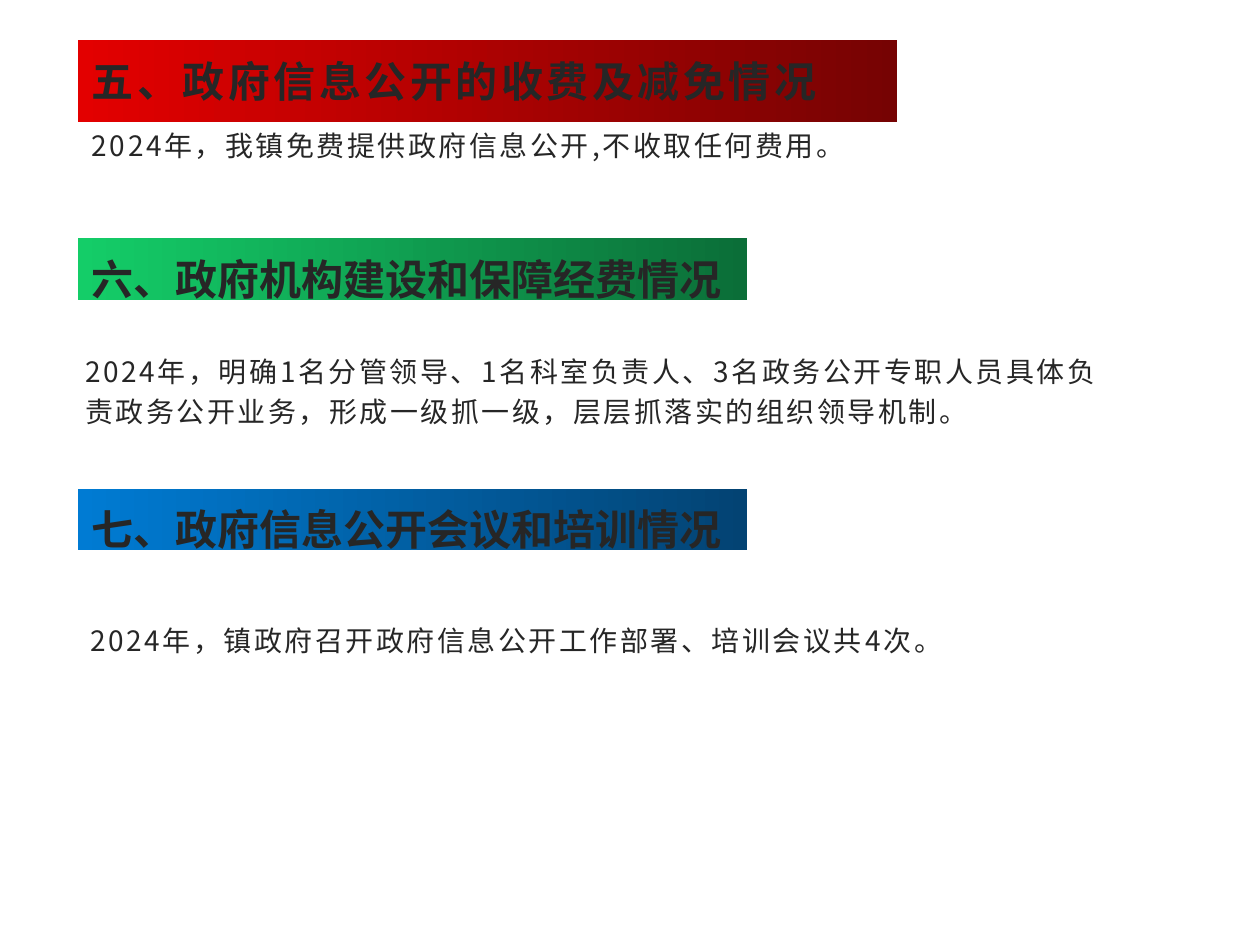
from pptx import Presentation
from pptx.dml.color import RGBColor as Rgb
from pptx.enum.shapes import MSO_SHAPE as Shape
from pptx.enum.text import MSO_ANCHOR as Anchor, PP_ALIGN as Align
from pptx.oxml.ns import qn
from pptx.util import Pt
from lxml.etree import SubElement

FONT = "Noto Sans CJK SC"
HEX = {
    "ink": "262626",
    "red": ("E30000", "760303"),
    "green": ("14CD68", "0B6E38"),
    "blue": ("007BD3", "034373"),
}
PARTS = [
    ("red", (44.6, 23, 468, 46.8), "五、政府信息公开的收费及减免情况", 2,
     (0, 46.8, 656.6, 60.5), (7.9, 0, 6.5, 0),
     "2024年，我镇免费提供政府信息公开,不收取任何费用。"),
    ("green", (44.6, 136, 382.3, 35.3), "六、政府机构建设和保障经费情况", 0,
     (-2.9, 59.1, 600.5, 54), (7.2, 3.6, 7.2, 3.6),
     "2024年，明确1名分管领导、1名科室负责人、3名政务公开专职人员具体负责政务公开业务，"
     "形成一级抓一级，层层抓落实的组织领导机制。"),
    ("blue", (44.6, 279.3, 382.3, 35.3), "七、政府信息公开会议和培训情况", 0,
     (0, 69.9, 651.6, 30.2), (7.2, 3.6, 7.2, 3.6),
     "2024年，镇政府召开政府信息公开工作部署、培训会议共4次。"),
]


def write(shape, text, size, gap, pads, bold=False):
    frame = shape.text_frame
    frame.text = text
    frame.word_wrap = True
    frame.vertical_anchor = Anchor.TOP
    (frame.margin_left, frame.margin_top,
     frame.margin_right, frame.margin_bottom) = map(Pt, pads)
    para = frame.paragraphs[0]
    para.alignment = Align.LEFT
    para.line_spacing = 1.2
    run = para.runs[0]
    run.font.size = Pt(size)
    run.font.bold = bold
    run.font.name = FONT
    run.font.color.rgb = Rgb.from_string(HEX["ink"])
    props = run._r.get_or_add_rPr()
    props.set("spc", str(int(gap * 100)))
    SubElement(props, qn("a:ea")).set("typeface", FONT)
    return para


def add_head(slide, box, hue, text, gap):
    bar = slide.shapes.add_shape(Shape.RECTANGLE, *map(Pt, box))
    bar.shadow.inherit = False
    bar.line.fill.background()
    bar.fill.gradient()
    bar.fill.gradient_angle = 0
    for stop, code in zip(bar.fill.gradient_stops, HEX[hue]):
        stop.color.rgb = Rgb.from_string(code)
    write(bar, text, 24, gap, (7.9, 2.9, 5.8, 2.9), True)


def add_body(slide, box, pads, text):
    note = slide.shapes.add_textbox(*map(Pt, box))
    write(note, text, 16, 1.5, pads).space_after = Pt(10)


def add_part(slide, hue, box, title, gap, place, pads, text):
    left, top = box[:2]
    add_head(slide, box, hue, title, gap)
    dx, dy, wide, high = place
    add_body(slide, (left + dx, top + dy, wide, high), pads, text)


def main():
    deck = Presentation()
    deck.slide_width, deck.slide_height = Pt(720), Pt(540)
    slide = deck.slides.add_slide(deck.slide_layouts[6])
    for part in PARTS:
        add_part(slide, *part)
    deck.save("out.pptx")


if __name__ == "__main__":
    main()
